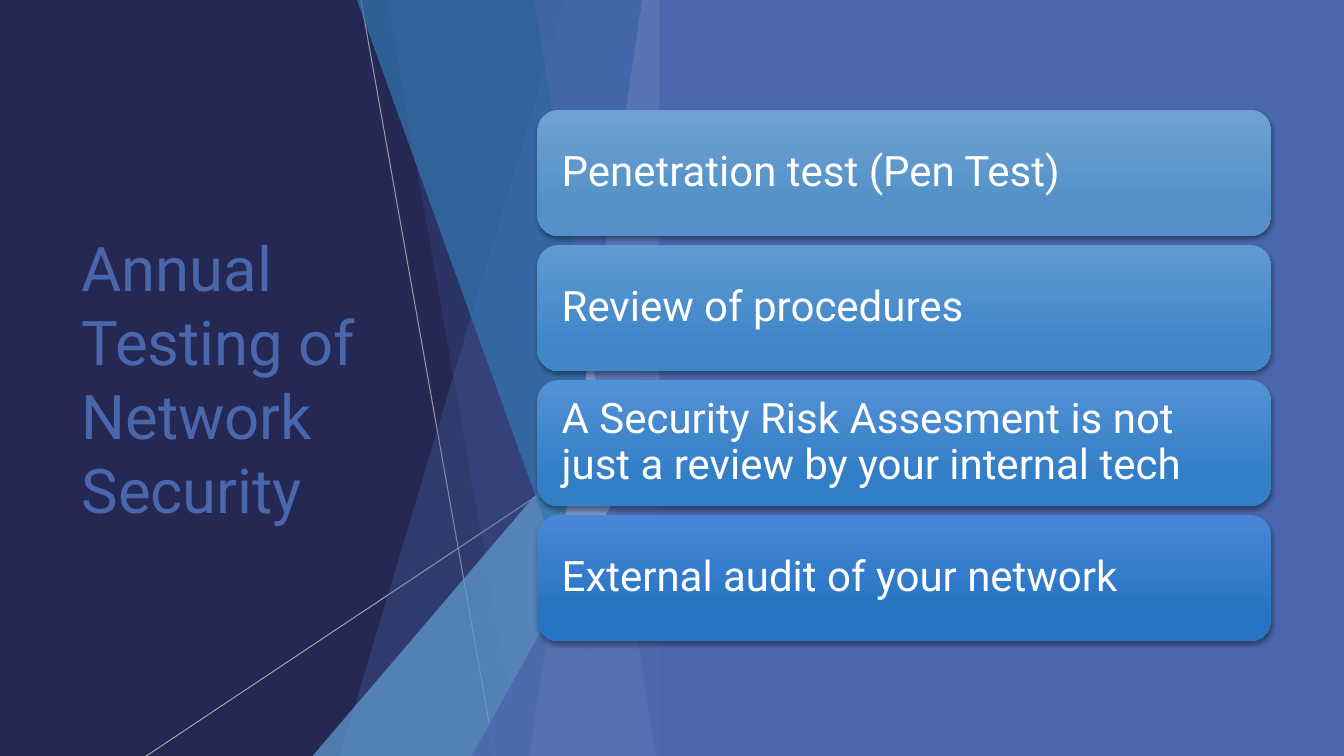
import pptx
import pptx.dml.color
import pptx.enum.shapes
import pptx.enum.text
import pptx.oxml
import pptx.oxml.ns
import pptx.util
from lxml import etree

SHAPES = pptx.enum.shapes.MSO_SHAPE
PX = 9144
WIDTH, HEIGHT = 1333, 750
FACET_RIGHT = 666
FONT = "Roboto"
COLORS = {
    "navy": "242852",
    "indigo": "4A66AC",
    "sky": "629DD1",
    "ocean": "3477B2",
    "lavender": "90A2CF",
    "silver": "BFBFBF",
    "white": "FFFFFF",
    "black": "000000",
}


def rgb(value):
    return pptx.dml.color.RGBColor.from_string(value)


def emu(*lengths):
    return [pptx.util.Emu(length * PX) for length in lengths]


class SlideBuilder:
    def __init__(self, slide):
        self.slide = slide
        self.shapes = slide.shapes
        fill = slide.background.fill
        fill.solid()
        fill.fore_color.rgb = rgb(COLORS["navy"])

    def set_alpha(self, element, percent):
        color = next(element.iter(pptx.oxml.ns.qn("a:srgbClr")))
        alpha = etree.SubElement(color, pptx.oxml.ns.qn("a:alpha"))
        alpha.set("val", str(percent * 1000))

    def paint(self, shape, color, opacity=100):
        shape.shadow.inherit = False
        shape.line.fill.background()
        shape.fill.solid()
        shape.fill.fore_color.rgb = rgb(COLORS[color])
        if opacity < 100:
            self.set_alpha(shape.element.spPr, opacity)

    def panel(self, left, width, color):
        shape = self.shapes.add_shape(SHAPES.RECTANGLE, *emu(left, 0, width, HEIGHT))
        self.paint(shape, color)

    def ray(self, start, end, opacity):
        line = self.shapes.add_connector(
            pptx.enum.shapes.MSO_CONNECTOR.STRAIGHT, *emu(*start, *end))
        line.line.width = pptx.util.Pt(0.75)
        line.line.color.rgb = rgb(COLORS["silver"])
        self.set_alpha(line.element.spPr, opacity)
        etree.SubElement(line.element.spPr, pptx.oxml.ns.qn("a:effectLst"))

    def facet(self, top_left, bottom_left, color, opacity):
        builder = self.shapes.build_freeform(top_left, 0, scale=PX)
        builder.add_line_segments([
            (FACET_RIGHT, 0), (FACET_RIGHT, HEIGHT), (bottom_left, HEIGHT)])
        self.paint(builder.convert_to_shape(), color, opacity)

    def corner(self, left, top, color, opacity):
        shape = self.shapes.add_shape(
            SHAPES.ISOSCELES_TRIANGLE,
            *emu(left, top, FACET_RIGHT - left, HEIGHT - top))
        shape.adjustments[0] = 1
        self.paint(shape, color, opacity)

    def set_text(self, shape, text, size, color, inset_x, inset_y, spacing=None):
        frame = shape.text_frame
        frame.word_wrap = True
        frame.vertical_anchor = pptx.enum.text.MSO_ANCHOR.MIDDLE
        frame.margin_left, frame.margin_right = emu(inset_x, inset_x)
        frame.margin_top, frame.margin_bottom = emu(inset_y, inset_y)
        paragraph = frame.paragraphs[0]
        paragraph.alignment = pptx.enum.text.PP_ALIGN.LEFT
        if spacing:
            paragraph.line_spacing = spacing
        run = paragraph.add_run()
        run.text = text
        run.font.name = FONT
        run.font.size = pptx.util.Pt(size)
        run.font.color.rgb = rgb(COLORS[color])

    def title(self, text, left, top, width, height):
        box = self.shapes.add_textbox(*emu(left, top, width, height))
        self.set_text(box, text, 44, "indigo", 10, 5)

    def card(self, text, top, light, deep):
        shape = self.shapes.add_shape(
            SHAPES.ROUNDED_RECTANGLE, *emu(533, top, 728, 125))
        shape.line.fill.background()
        shape.fill.gradient()
        shape.fill.gradient_angle = 270
        stops = shape.fill.gradient_stops
        for stop, position, color in zip(stops, (0, 0.78), (light, deep)):
            stop.position = position
            stop.color.rgb = rgb(color)
        self.drop_shadow(shape)
        self.set_text(shape, text, 30, "white", 18, 18, 0.9)

    def drop_shadow(self, shape):
        shape.shadow.inherit = False
        effects = shape.element.spPr.find(pptx.oxml.ns.qn("a:effectLst"))
        shadow = etree.SubElement(
            effects, pptx.oxml.ns.qn("a:outerShdw"),
            blurRad=str(pptx.util.Pt(3)), dist=str(pptx.util.Pt(2)),
            dir="5400000", algn="ctr", rotWithShape="0")
        etree.SubElement(shadow, pptx.oxml.ns.qn("a:srgbClr"), val=COLORS["black"])
        self.set_alpha(shadow, 35)


def main():
    deck = pptx.Presentation()
    deck.slide_width, deck.slide_height = emu(WIDTH, HEIGHT)
    builder = SlideBuilder(deck.slides.add_slide(deck.slide_layouts[6]))

    builder.panel(0, WIDTH, "navy")
    builder.title("Annual Testing of Network Security", 71, 151, 388, 448)

    builder.ray((358, 0), (491, HEIGHT), 75)
    builder.ray((FACET_RIGHT, 403), (145, HEIGHT), 80)
    builder.facet(561, 337, "indigo", 30)
    builder.facet(384, 516, "indigo", 20)
    builder.corner(310, 333, "sky", 72)
    builder.facet(354, 624, "ocean", 70)
    builder.facet(637, 525, "lavender", 70)
    builder.facet(530, 651, "indigo", 65)
    builder.corner(468, 393, "indigo", 80)
    builder.panel(654, WIDTH - 654, "indigo")

    testing_steps = [
        ("Penetration test (Pen Test)", "6FA2D3", "5290C7"),
        ("Review of procedures", "609AD4", "4087C8"),
        ("A Security Risk Assesment is not just a review by your internal tech",
         "5391D5", "327EC7"),
        ("External audit of your network", "4887D7", "2674C3"),
    ]
    for index, (text, light, deep) in enumerate(testing_steps):
        builder.card(text, 109 + 134 * index, light, deep)

    deck.save("out.pptx")


if __name__ == "__main__":
    main()
